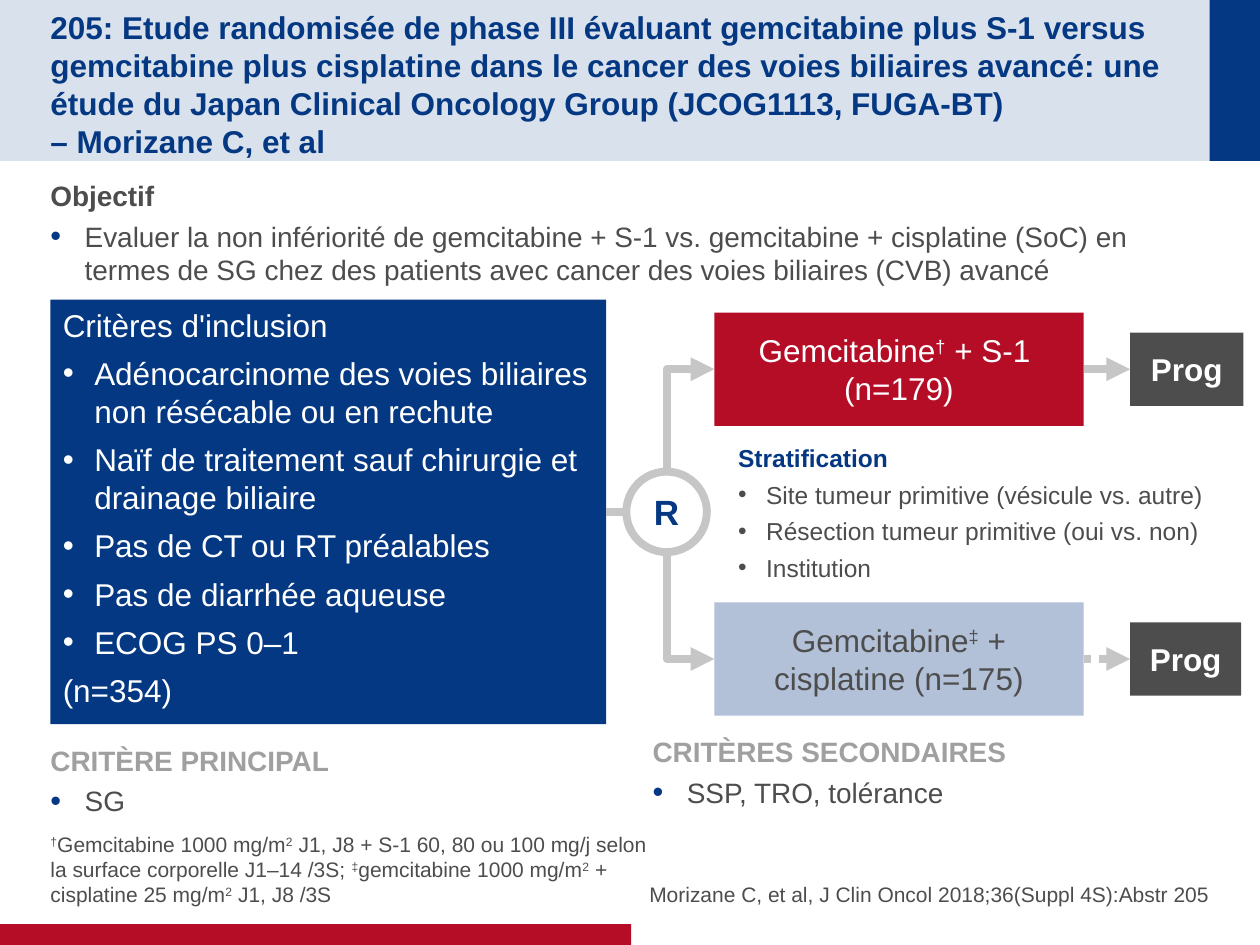
"""Build the study design slide of a phase III trial in biliary tract cancer."""
from lxml.etree import SubElement
from pptx import Presentation
from pptx.dml.color import RGBColor
from pptx.enum.dml import MSO_LINE
from pptx.enum.shapes import MSO_CONNECTOR, MSO_SHAPE
from pptx.enum.text import MSO_ANCHOR, MSO_AUTO_SIZE, PP_ALIGN
from pptx.oxml.ns import qn
from pptx.util import Pt

COLORS = {"navy": "043882", "red": "B60D27", "gray": "4D4D4D", "silver": "A0A0A0",
          "line": "C6C6C6", "pale": "B2C0D8", "white": "FFFFFF"}

# Text between two ^ signs is superscript.
TITLE = ("205: Etude randomisée de phase III évaluant gemcitabine plus S-1 versus gemcitabine "
         "plus cisplatine dans le cancer des voies biliaires avancé: une étude du Japan Clinical "
         "Oncology Group (JCOG1113, FUGA-BT) \n– Morizane C, et al")
OBJECTIVE = ("Objectif", ["Evaluer la non infériorité de gemcitabine + S-1 vs. gemcitabine + "
                          "cisplatine (SoC) en termes de SG chez des patients avec cancer des "
                          "voies biliaires (CVB) avancé"])
PRIMARY = ("CRITÈRE PRINCIPAL", ["SG"])
SECONDARY = ("CRITÈRES SECONDAIRES", ["SSP, TRO, tolérance"])
STRATIFICATION = ("Stratification", ["Site tumeur primitive (vésicule vs. autre)",
                                     "Résection tumeur primitive (oui vs. non)", "Institution"])
INCLUSION = ("Critères d'inclusion", ["Adénocarcinome des voies biliaires non résécable ou en rechute",
                                      "Naïf de traitement sauf chirurgie et drainage biliaire",
                                      "Pas de CT ou RT préalables", "Pas de diarrhée aqueuse",
                                      "ECOG PS 0–1"])
PATIENTS = "(n=354)"
FOOTNOTE = ("^†^Gemcitabine 1000 mg/m^2^ J1, J8 + S-1 60, 80 ou 100 mg/j selon la surface "
            "corporelle J1–14 /3S; ^‡^gemcitabine 1000 mg/m^2^ + cisplatine 25 mg/m^2^ J1, J8 /3S")
SOURCE = "Morizane C, et al, J Clin Oncol 2018;36(Suppl 4S):Abstr 205"
ARMS = [
    {"lines": ["Gemcitabine^†^ + S-1 ", "(n=179)"], "middle": 211, "fill": "red", "color": "white",
     "dash": None, "end_width": 64.8, "site": 0, "turn": 90},
    {"lines": ["Gemcitabine^‡^ + cisplatine (n=175)"], "middle": 376.6, "fill": "pale", "color": "gray",
     "dash": MSO_LINE.ROUND_DOT, "end_width": 63.4, "site": 4, "turn": 270},
]
LEFT = 28.8
ARM_LEFT, ARM_WIDTH, ARM_HEIGHT = 408.2, 211, 64.8
END_LEFT, END_HEIGHT = 645.8, 41.8
CIRCLE_X, CIRCLE_Y, CIRCLE_SIZE = 380.9, 292.5, 46

deck = Presentation()
deck.slide_width, deck.slide_height = Pt(720), Pt(540)
page = deck.slides.add_slide(deck.slide_layouts[4])


def rgb(name):
    return RGBColor.from_string(COLORS[name])


def write(para, text, size=18, color="gray", bold=False, align=PP_ALIGN.LEFT, after=0,
          bullet=False, indent=0, bullet_color=None):
    para.alignment = align
    para.space_before, para.space_after = Pt(0), Pt(after)
    props = para._p.get_or_add_pPr()
    props.set("marL", str(Pt(indent)))
    props.set("indent", str(-Pt(indent)))
    if bullet_color:
        SubElement(SubElement(props, qn("a:buClr")), qn("a:srgbClr"), val=COLORS[bullet_color])
        SubElement(props, qn("a:buSzPct"), val="110000")
    if bullet:
        SubElement(props, qn("a:buFont"), typeface="Arial")
        SubElement(props, qn("a:buChar"), char="•")
    else:
        SubElement(props, qn("a:buNone"))
    for number, piece in enumerate(text.split("^")):
        for row, line in enumerate(piece.split("\n")):
            if row:
                para.add_line_break()
            if not line:
                continue
            span = para.add_run()
            span.text = line
            font = span.font
            font.name, font.size, font.bold = "Arial", Pt(size), bold
            font.color.rgb = rgb(color)
            if number % 2:
                font._element.set("baseline", "30000")


def fill_text(box, items, insets=(0, 3.6, 0, 3.6), anchor=MSO_ANCHOR.TOP, wrap=True):
    frame = box.text_frame
    frame.auto_size, frame.word_wrap = MSO_AUTO_SIZE.NONE, wrap
    frame.vertical_anchor = anchor
    (frame.margin_left, frame.margin_top,
     frame.margin_right, frame.margin_bottom) = map(Pt, insets)
    for number, (text, style) in enumerate(items):
        write(frame.add_paragraph() if number else frame.paragraphs[0], text, **style)


def section(content, head, item):
    heading, points = content
    return [(heading, head)] + [(point, {"bullet": True, **item}) for point in points]


def place(box, left, top, width, height):
    box.left, box.top, box.width, box.height = map(Pt, (left, top, width, height))
    return box


def text_box(*frame):
    return page.shapes.add_textbox(*map(Pt, frame))


def add_shape(kind, left, top, width, height, fill=None):
    shape = page.shapes.add_shape(kind, *map(Pt, (left, top, width, height)))
    shape.shadow.inherit = False
    shape.line.fill.background()
    if fill:
        shape.fill.solid()
        shape.fill.fore_color.rgb = rgb(fill)
    else:
        shape.fill.background()
    return shape


def add_link(x1, y1, x2, y2, kind=MSO_CONNECTOR.STRAIGHT, arrow=True, dash=None):
    link = page.shapes.add_connector(kind, *map(Pt, (x1, y1, x2, y2)))
    link.line.color.rgb, link.line.width = rgb("line"), Pt(4.5)
    if dash:
        link.line.dash_style = dash
    if arrow:
        SubElement(link.line._get_or_add_ln(), qn("a:tailEnd"), type="triangle")
    SubElement(link._element.spPr, qn("a:effectLst"))
    return link


def add_elbow(circle, box, middle, site, turn):
    start = CIRCLE_Y + (CIRCLE_SIZE / 2 if site else -CIRCLE_SIZE / 2)
    link = add_link(CIRCLE_X, start, ARM_LEFT, middle, MSO_CONNECTOR.ELBOW)
    link.begin_connect(circle, 2 if site else 0)
    link._element.nvCxnSpPr.cNvCxnSpPr.stCxn.set("idx", str(site))
    link.end_connect(box, 1)
    width, height = abs(middle - start), ARM_LEFT - CIRCLE_X
    place(link, (CIRCLE_X + ARM_LEFT - width) / 2, (start + middle - height) / 2, width, height)
    frame = link._element.spPr.find(qn("a:xfrm"))
    frame.set("rot", str(turn * 60000))
    frame.set("flipH", "1")
    frame.set("flipV", "0" if site else "1")
    link._element.spPr.find(qn("a:prstGeom")).set("prst", "bentConnector2")


bands = [add_shape(MSO_SHAPE.RECTANGLE, *frame) for frame in
         [(0, 0, 720, 92, "navy"), (691.2, 0, 28.8, 92, "navy"), (0, 528, 360.7, 12, "red")]]
for position, band in enumerate(bands, 2):
    page.shapes._spTree.insert(position, band._element)
header_color = bands[0]._element.spPr.find(qn("a:solidFill"))[0]
SubElement(header_color, qn("a:alpha"), val="15000")

fields = {field.placeholder_format.idx: field for field in page.placeholders}
fill_text(place(fields[0], LEFT, 14.4, 648.7, 63.4), [(TITLE, {"color": "navy", "bold": True})],
          insets=(0, 3.6, 0, 0), anchor=MSO_ANCHOR.MIDDLE)
body = {"size": 16, "after": 4}
body_item = {**body, "indent": 19.6, "bullet_color": "navy"}
fill_text(place(fields[2], LEFT, 98.6, 662.4, 373.7), section(OBJECTIVE, {**body, "bold": True}, body_item))
for index, text, left, width, align in [(1, FOOTNOTE, LEFT, 342, PP_ALIGN.LEFT),
                                        (3, SOURCE, 365.8, 325.4, PP_ALIGN.RIGHT)]:
    fill_text(place(fields[index], left, 480.2, width, 38.2),
              [(text, {"size": 12, "after": 4, "align": align})], insets=(0, 0, 0, 0), anchor=MSO_ANCHOR.BOTTOM)
fields[4]._element.getparent().remove(fields[4]._element)

criterion = {**body, "color": "silver", "bold": True}
for content, left, top, inset in [(PRIMARY, LEFT, 421.2, 0), (SECONDARY, 365.8, 416.2, 7.2)]:
    fill_text(text_box(left, top, 325.4, 54.7), section(content, criterion, body_item),
              insets=(inset, 3.6, inset, 3.6))
fill_text(text_box(414.7, 249.8, 305.3, 70.6),
          section(STRATIFICATION, {"size": 14, "color": "navy", "bold": True, "after": 4},
                  {"size": 14, "indent": 16, "after": 4}), insets=(7.2, 3.6, 7.2, 3.6))

inclusion = add_shape(MSO_SHAPE.ROUNDED_RECTANGLE, LEFT, 171.2, 317.6, 242.6, "navy")
inclusion.adjustments[0] = 0
white = {"color": "white", "after": 6}
fill_text(inclusion, section(INCLUSION, white, {**white, "indent": 18}) + [(PATIENTS, white)],
          insets=(7.2, 3.6, 7.2, 3.6))

circle = add_shape(MSO_SHAPE.OVAL, CIRCLE_X - CIRCLE_SIZE / 2, CIRCLE_Y - CIRCLE_SIZE / 2,
                   CIRCLE_SIZE, CIRCLE_SIZE)
circle.line.color.rgb, circle.line.width = rgb("line"), Pt(4.5)
centered = {"align": PP_ALIGN.CENTER}
fill_text(circle, [("R", {"size": 20, "color": "navy", "bold": True, **centered})],
          anchor=MSO_ANCHOR.MIDDLE, wrap=False)
add_link(346.4, CIRCLE_Y, CIRCLE_X - CIRCLE_SIZE / 2, CIRCLE_Y, arrow=False).begin_connect(inclusion, 3)

for arm in ARMS:
    middle = arm["middle"]
    treatment = add_shape(MSO_SHAPE.RECTANGLE, ARM_LEFT, middle - ARM_HEIGHT / 2, ARM_WIDTH, ARM_HEIGHT, arm["fill"])
    fill_text(treatment, [(line, {"color": arm["color"], **centered}) for line in arm["lines"]],
              insets=(7.2, 0, 7.2, 0), anchor=MSO_ANCHOR.MIDDLE)
    outcome = add_shape(MSO_SHAPE.RECTANGLE, END_LEFT, middle - END_HEIGHT / 2, arm["end_width"], END_HEIGHT, "gray")
    fill_text(outcome, [("Prog", {"color": "white", "bold": True, **centered})],
              insets=(7.2, 0, 7.2, 0), anchor=MSO_ANCHOR.MIDDLE)
    link = add_link(ARM_LEFT + ARM_WIDTH, middle, END_LEFT, middle, dash=arm["dash"])
    link.begin_connect(treatment, 3)
    link.end_connect(outcome, 1)
    add_elbow(circle, treatment, middle, arm["site"], arm["turn"])

deck.save("out.pptx")
